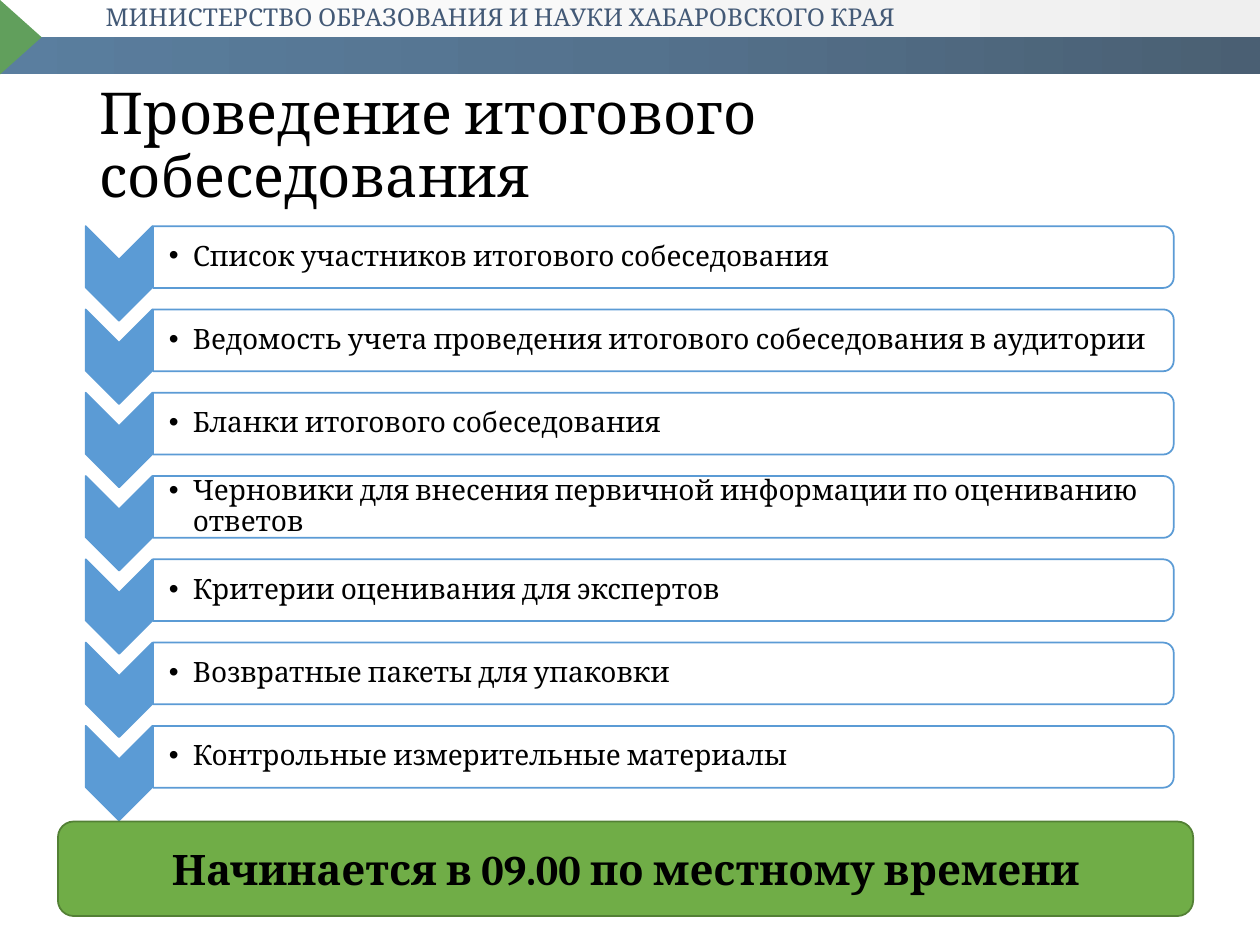
from dataclasses import dataclass

from lxml.etree import SubElement
from pptx import Presentation
from pptx.dml.color import RGBColor
from pptx.enum.shapes import MSO_SHAPE as SHAPE
from pptx.enum.text import MSO_ANCHOR as ANCHOR, PP_ALIGN as ALIGN
from pptx.oxml.ns import qn
from pptx.util import Inches, Pt


@dataclass(frozen=True)
class Theme:
    font: str = "Cambria"
    text: str = "000000"
    header_text: str = "143054"
    white: str = "FFFFFF"
    blue: str = "5B9BD5"
    green: str = "70AD47"
    green_line: str = "538035"
    marker: str = "3A8834"
    top_band: tuple = ((0, "ECECEC"), (100, "FFFFFF"))
    low_band: tuple = ((0, "1D3850"), (50, "2A4F71"), (100, "315E87"))
    header_size: int = 14
    title_size: int = 33
    item_size: int = 16
    banner_size: int = 24


class SlideBuilder:
    """Places elements on a grid of 100 columns by 75 rows."""
    COLS, ROWS = 100, 75

    def __init__(self, prs, theme):
        self.theme = theme
        self.col = prs.slide_width / self.COLS
        self.row = prs.slide_height / self.ROWS
        self.slide = prs.slides.add_slide(prs.slide_layouts[5])

    def box(self, x, y, w, h):
        return (round(x * self.col), round(y * self.row),
                round(w * self.col), round(h * self.row))

    def shape(self, kind, area, fill, line=None, alpha=None, turned=False):
        """Draw a preset; a turned one fills the area after a quarter turn."""
        x, y, w, h = area
        if turned:
            x, y, w, h = x + (w - h) / 2, y + (h - w) / 2, h, w
        sp = self.slide.shapes.add_shape(kind, *self.box(x, y, w, h))
        sp.rotation = 90 if turned else 0
        sp.shadow.inherit = False
        if isinstance(fill, tuple):
            self.gradient(sp, fill)
        else:
            sp.fill.solid()
            sp.fill.fore_color.rgb = RGBColor.from_string(fill)
        if alpha is not None:
            color = sp._element.spPr.find(qn("a:solidFill"))[0]
            SubElement(color, qn("a:alpha"), val=str(alpha * 1000))
        if line:
            sp.line.color.rgb = RGBColor.from_string(line)
            sp.line.width = Pt(1)
        else:
            sp.line.fill.background()
        return sp

    def gradient(self, sp, stops):
        sp.fill.gradient()
        sp.fill.gradient_angle = 180
        stop_list = next(sp._element.spPr.iter(qn("a:gsLst")))
        for old in list(stop_list):
            stop_list.remove(old)
        for pos, color in stops:
            gs = SubElement(stop_list, qn("a:gs"), pos=str(pos * 1000))
            SubElement(gs, qn("a:srgbClr"), val=color)

    def label(self, sp, text, size, color=None, bold=False, align=ALIGN.LEFT):
        tf = sp.text_frame
        tf.word_wrap = True
        tf.vertical_anchor = ANCHOR.MIDDLE
        p = tf.paragraphs[0]
        p.alignment = align
        r = p.add_run()
        r.text = text
        r.font.name = self.theme.font
        r.font.size = Pt(size)
        r.font.bold = bold
        r.font.color.rgb = RGBColor.from_string(color or self.theme.text)
        return p

    def text(self, area, text, size, color=None):
        sp = self.slide.shapes.add_textbox(*self.box(*area))
        return sp, self.label(sp, text, size, color)

    def title(self, area, text):
        sp = self.slide.shapes.title
        sp.left, sp.top, sp.width, sp.height = self.box(*area)
        self.label(sp, text, self.theme.title_size).line_spacing = 0.9

    def bullet(self, area, text):
        sp, p = self.text(area, text, self.theme.item_size)
        tf = sp.text_frame
        tf.margin_left = Inches(0.12)
        tf.margin_top = tf.margin_right = tf.margin_bottom = Inches(0.01)
        pPr = p._p.get_or_add_pPr()
        pPr.set("marL", str(Inches(0.19)))
        pPr.set("indent", str(-Inches(0.19)))
        SubElement(pPr, qn("a:buFont"), typeface="Arial")
        SubElement(pPr, qn("a:buChar"), char="•")
        p.line_spacing = 0.9

    def step(self, y, text):
        """One row of the list: chevron, rounded bar and bullet."""
        t = self.theme
        self.shape(SHAPE.CHEVRON, (6.8, y, 5.3, 7.5), t.blue, t.blue, turned=True)
        self.shape(SHAPE.ROUND_2_SAME_RECTANGLE, (12.15, y, 81, 4.9),
                   t.white, t.blue, alpha=90, turned=True)
        self.bullet((12.2, y + 0.25, 80.7, 4.4), text)


ITEMS = (
    "Список участников итогового собеседования",
    "Ведомость учета проведения итогового собеседования в аудитории",
    "Бланки итогового собеседования",
    "Черновики для внесения первичной информации по оцениванию ответов",
    "Критерии оценивания для экспертов",
    "Возвратные пакеты для упаковки",
    "Контрольные измерительные материалы",
)
FIRST_ROW, ROW_PITCH = 17.95, 6.61


def main():
    prs = Presentation()
    prs.slide_width, prs.slide_height = Inches(10), Inches(7.5)
    t = Theme()
    s = SlideBuilder(prs, t)

    # Header band, softened by a translucent white veil
    s.shape(SHAPE.RECTANGLE, (0, 0, 100, 5.9), t.top_band)
    s.shape(SHAPE.RECTANGLE, (0, 2.95, 100, 2.95), t.low_band)
    s.shape(SHAPE.ISOSCELES_TRIANGLE, (0, 0, 3.3, 5.9), t.marker, turned=True)
    s.text((7.4, -0.7, 89.4, 4.1),
           "МИНИСТЕРСТВО ОБРАЗОВАНИЯ И НАУКИ ХАБАРОВСКОГО КРАЯ",
           t.header_size, t.header_text)
    s.shape(SHAPE.RECTANGLE, (0, 0, 100, 5.9), t.white, alpha=20)

    # Title
    s.title((6.9, 6.6, 86.2, 10.2), "Проведение итогового собеседования")

    # Chevron list
    for i, item in enumerate(ITEMS):
        s.step(FIRST_ROW + i * ROW_PITCH, item)

    # Start time banner
    banner = s.shape(SHAPE.ROUNDED_RECTANGLE, (4.6, 65.2, 90.1, 7.5),
                     t.green, t.green_line)
    s.label(banner, "Начинается в 09.00 по местному времени",
            t.banner_size, bold=True, align=ALIGN.CENTER)

    prs.save("out.pptx")


if __name__ == "__main__":
    main()
